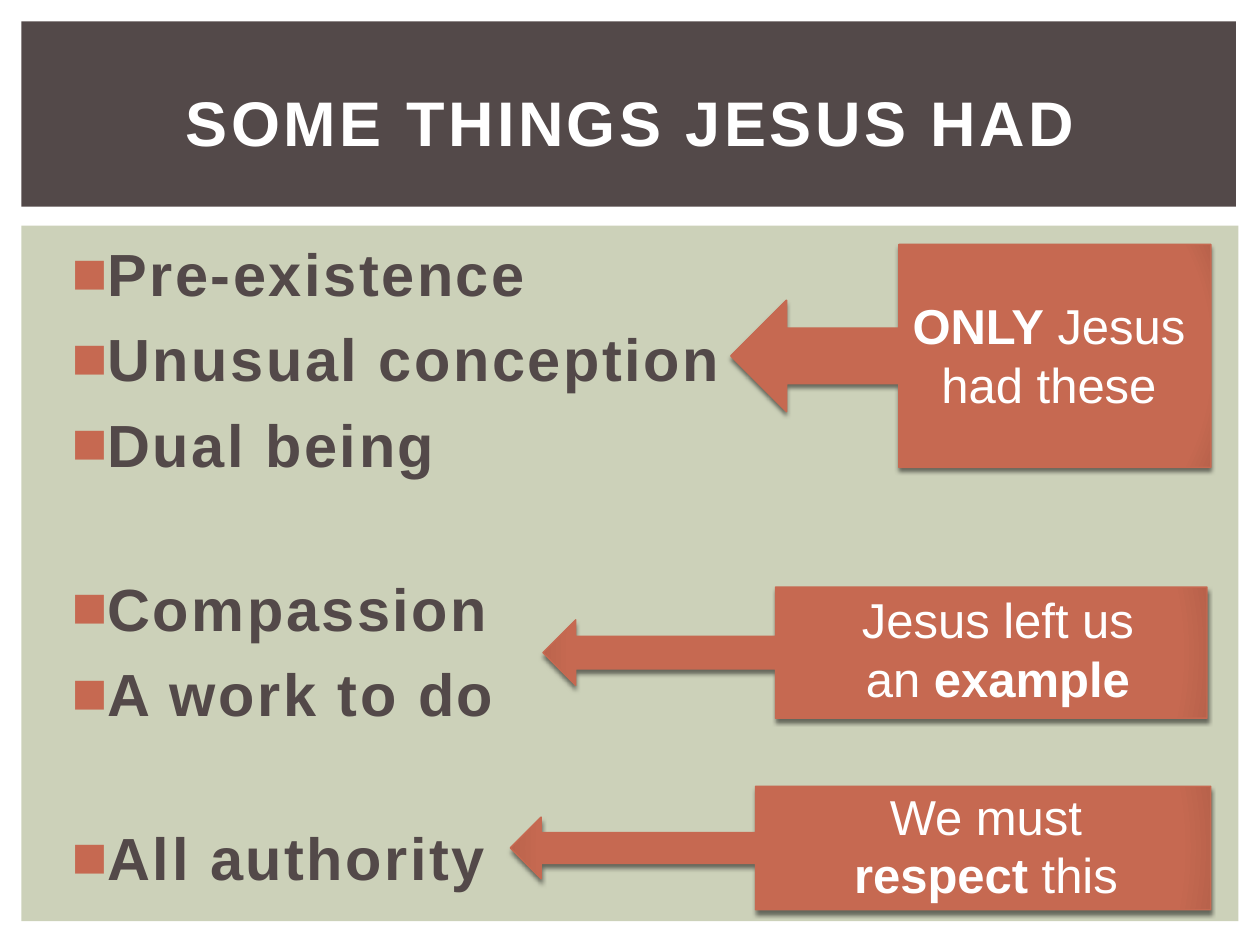
from lxml import etree
from pptx import Presentation
from pptx.dml.color import RGBColor
from pptx.enum.shapes import MSO_SHAPE as SHAPE
from pptx.enum.text import MSO_ANCHOR as ANCHOR, PP_ALIGN as ALIGN
from pptx.oxml import parse_xml
from pptx.oxml.ns import nsdecls, qn
from pptx.util import Inches, Pt

DARK, SAGE, RUST, RUST_DEEP, WHITE = "534949", "CCD1B9", "C66951", "B8624B", "FFFFFF"

GROUPS = [
    ["Pre-existence", "Unusual conception", "Dual being"],
    ["Compassion", "A work to do"],
    ["All authority"],
]
# Arrow box, label box, label
CALLOUTS = [
    ((5.8, 1.94, 3.81, 1.77), (7.04, 2.3, 2.57, 1.04), "*ONLY* Jesus had these"),
    ((4.31, 4.66, 5.27, 1.04), (6.22, 4.63, 3.4, 1.04), "Jesus left us\nan *example*"),
    ((4.05, 6.24, 5.56, 0.98), (6.03, 6.19, 3.59, 1.04), "We must\n*respect* this"),
]


def rgb(color):
    return RGBColor.from_string(color)


def inches(box):
    return [Inches(v) for v in box]


def add_panel(slide, box, color):
    sp = slide.shapes.add_shape(SHAPE.RECTANGLE, *inches(box))
    sp.shadow.inherit = False
    sp.fill.solid()
    sp.fill.fore_color.rgb = rgb(color)
    sp.line.fill.background()


def add_text_frame(slide, box, anchor=ANCHOR.TOP):
    tf = slide.shapes.add_textbox(*inches(box)).text_frame
    tf.word_wrap = True
    tf.vertical_anchor = anchor
    return tf


def write(p, text, size, color=WHITE, bold=False, spacing=0, align=ALIGN.LEFT):
    """Fill a paragraph; asterisks toggle bold and newlines break the line."""
    p.alignment = align
    for i, line in enumerate(text.split("\n")):
        if i:
            p.add_line_break()
        for j, part in enumerate(line.split("*")):
            if not part:
                continue
            r = p.add_run()
            r.text = part
            r.font.name = "Arial"
            r.font.size = Pt(size)
            r.font.bold = bold or j % 2 == 1
            r.font.color.rgb = rgb(color)
            if spacing:
                r.font._element.set("spc", str(int(spacing * 100)))


def add_bullet(p, color):
    pPr = p._p.get_or_add_pPr()
    pPr.set("marL", str(Inches(0.3)))
    pPr.set("indent", str(Inches(-0.25)))
    bu_clr = etree.SubElement(pPr, qn("a:buClr"))
    etree.SubElement(bu_clr, qn("a:srgbClr"), val=color)
    etree.SubElement(pPr, qn("a:buFont"), typeface="Arial")
    etree.SubElement(pPr, qn("a:buChar"), char="■")


def add_title(slide, band, box, text):
    add_panel(slide, band, DARK)
    tf = add_text_frame(slide, box, ANCHOR.MIDDLE)
    write(tf.paragraphs[0], text, 36, bold=True, spacing=2, align=ALIGN.CENTER)


def add_bullet_groups(slide, box, groups):
    tf = add_text_frame(slide, box)
    tf.margin_top = Inches(0.1)
    for g, group in enumerate(groups):
        for i, text in enumerate(group):
            first = g == i == 0
            p = tf.paragraphs[0] if first else tf.add_paragraph()
            write(p, text, 34, DARK, bold=True, spacing=1.5)
            p.space_before = Pt(0 if first else 8 if i else 53)
            add_bullet(p, RUST)


def shade_callout(sp):
    """Give the shape a fill that darkens at its corner, and a soft shadow."""
    stops = "".join(
        f'<a:gs pos="{pos * 1000}"><a:srgbClr val="{color}"/></a:gs>'
        for pos, color in [(0, RUST), (90, RUST), (100, RUST_DEEP)]
    )
    fill = parse_xml(
        f'<a:gradFill {nsdecls("a")} rotWithShape="1"><a:gsLst>{stops}</a:gsLst>'
        '<a:path path="circle"><a:fillToRect l="100000" t="100000" r="100000" b="100000"/>'
        "</a:path></a:gradFill>"
    )
    shadow = parse_xml(
        f'<a:outerShdw {nsdecls("a")} blurRad="{Pt(2.5)}" dist="{Pt(2)}" dir="5400000" '
        'rotWithShape="0"><a:srgbClr val="000000"><a:alpha val="50000"/></a:srgbClr>'
        "</a:outerShdw>"
    )
    spPr = sp._element.spPr
    spPr.find(qn("a:ln")).addprevious(fill)
    spPr.find(qn("a:effectLst")).append(shadow)


def add_callout(slide, arrow_box, label_box, text):
    sp = slide.shapes.add_shape(SHAPE.LEFT_ARROW_CALLOUT, *inches(arrow_box))
    sp.line.color.rgb = rgb(RUST)
    sp.line.width = Pt(0.79)
    sp.shadow.inherit = False
    shade_callout(sp)
    tf = add_text_frame(slide, label_box)
    write(tf.paragraphs[0], text, 28, align=ALIGN.CENTER)


def main():
    prs = Presentation()
    prs.slide_width, prs.slide_height = Inches(10), Inches(7.5)
    slide = prs.slides.add_slide(prs.slide_layouts[6])
    add_panel(slide, (0.17, 1.79, 9.66, 5.52), SAGE)
    add_title(slide, (0.17, 0.17, 9.64, 1.47), (0.42, 0.39, 9.17, 1.15),
              "SOME THINGS JESUS HAD")
    add_bullet_groups(slide, (0.42, 1.78, 9.19, 5.43), GROUPS)
    for arrow_box, label_box, text in CALLOUTS:
        add_callout(slide, arrow_box, label_box, text)
    prs.save("out.pptx")


if __name__ == "__main__":
    main()
